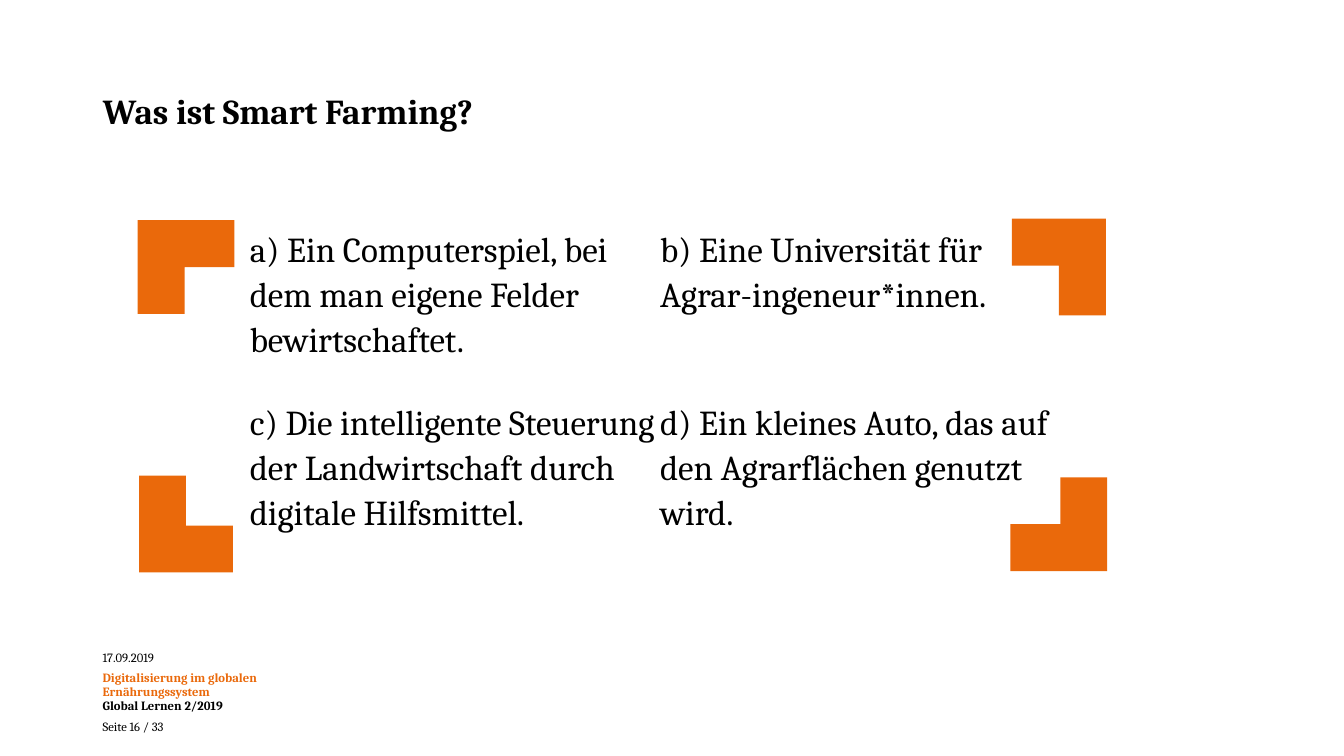
import dataclasses

import pptx
import pptx.dml.color
import pptx.enum.shapes
import pptx.enum.text
import pptx.util

Pt = pptx.util.Pt


@dataclasses.dataclass(frozen=True)
class Theme:
    font: str = "Cambria"
    text_color: str = "000000"
    accent_color: str = "EA690B"
    main_size: float = 25
    footer_size: float = 9


THEME = Theme()

CORNER_SIZE = (67, 69.12)
CORNER_LEFT, CORNER_RIGHT = 99.36, 722.88
CORNER_TOP, CORNER_BOTTOM = 156.24, 339.84
CORNERS = [
    (CORNER_LEFT, CORNER_BOTTOM, 0),
    (CORNER_LEFT, CORNER_TOP, 90),
    (CORNER_RIGHT, CORNER_TOP, 180),
    (CORNER_RIGHT, CORNER_BOTTOM, 270),
]

ANSWER_LEFT, ANSWER_RIGHT = 171.36, 464.4
ANSWER_TOP, ANSWER_BOTTOM = 157, 280.8
ANSWER_HEIGHT = 93.6
ANSWERS = [
    (ANSWER_LEFT, ANSWER_TOP, 270.72,
     "a) Ein Computerspiel, bei dem man eigene Felder bewirtschaftet."),
    (ANSWER_RIGHT, ANSWER_TOP, 257.76,
     "b) Eine Universität für Agrar-ingeneur*innen."),
    (ANSWER_LEFT, ANSWER_BOTTOM, 303.12,
     "c) Die intelligente Steuerung der Landwirtschaft durch digitale Hilfsmittel."),
    (ANSWER_RIGHT, ANSWER_BOTTOM, 303.12,
     "d) Ein kleines Auto, das auf den Agrarflächen genutzt wird."),
]

# text, colour, bold, space after
FOOTER = [
    ("17.09.2019", THEME.text_color, False, 4.5),
    ("Digitalisierung im globalen Ernährungssystem", THEME.accent_color, True, 0),
    ("Global Lernen 2/2019", THEME.text_color, True, 4.5),
    ("Seite 16 / 33", THEME.text_color, False, 0),
]


def set_attributes(target, values):
    for name, value in values.items():
        setattr(target, name, value)


def write_paragraph(paragraph, text, size, color=THEME.text_color, bold=False, **layout):
    """Fill a paragraph; layout holds paragraph attributes such as line_spacing."""
    set_attributes(paragraph, layout)
    run = paragraph.add_run()
    run.text = text
    set_attributes(run.font, {"name": THEME.font, "size": Pt(size), "bold": bold})
    run.font.color.rgb = pptx.dml.color.RGBColor.from_string(color)


def add_text_frame(slide, *box):
    text_frame = slide.shapes.add_textbox(*map(Pt, box)).text_frame
    text_frame.word_wrap = True
    return text_frame


def add_title(slide, text):
    title = slide.shapes.title
    set_attributes(title, {"left": Pt(66.24), "top": Pt(28.8),
                           "width": Pt(828), "height": Pt(104.4)})
    set_attributes(title.text_frame, {
        "auto_size": pptx.enum.text.MSO_AUTO_SIZE.NONE,
        "vertical_anchor": pptx.enum.text.MSO_ANCHOR.MIDDLE,
    })
    write_paragraph(title.text_frame.paragraphs[0], text, THEME.main_size, bold=True,
                    line_spacing=0.9, alignment=pptx.enum.text.PP_ALIGN.LEFT)


def add_corner(slide, left, top, rotation):
    corner = slide.shapes.add_shape(pptx.enum.shapes.MSO_SHAPE.CORNER,
                                    *map(Pt, (left, top, *CORNER_SIZE)))
    corner.rotation = rotation
    corner.shadow.inherit = False
    corner.fill.solid()
    corner.fill.fore_color.rgb = pptx.dml.color.RGBColor.from_string(THEME.accent_color)
    corner.line.fill.background()


def add_answer(slide, left, top, width, text):
    text_frame = add_text_frame(slide, left, top, width, ANSWER_HEIGHT)
    write_paragraph(text_frame.paragraphs[0], text, THEME.main_size, line_spacing=1.07)


def add_footer(slide):
    text_frame = add_text_frame(slide, 66.24, 461.52, 187.2, 68.4)
    for index, (text, color, bold, space_after) in enumerate(FOOTER):
        paragraph = text_frame.add_paragraph() if index else text_frame.paragraphs[0]
        write_paragraph(paragraph, text, THEME.footer_size, color, bold,
                        line_spacing=Pt(10), space_after=Pt(space_after))


def main():
    presentation = pptx.Presentation()
    set_attributes(presentation, {"slide_width": Pt(960), "slide_height": Pt(540)})
    slide = presentation.slides.add_slide(presentation.slide_layouts[5])
    add_footer(slide)
    add_title(slide, "Was ist Smart Farming?")
    for corner in CORNERS:
        add_corner(slide, *corner)
    for answer in ANSWERS:
        add_answer(slide, *answer)
    presentation.save("out.pptx")


if __name__ == "__main__":
    main()
